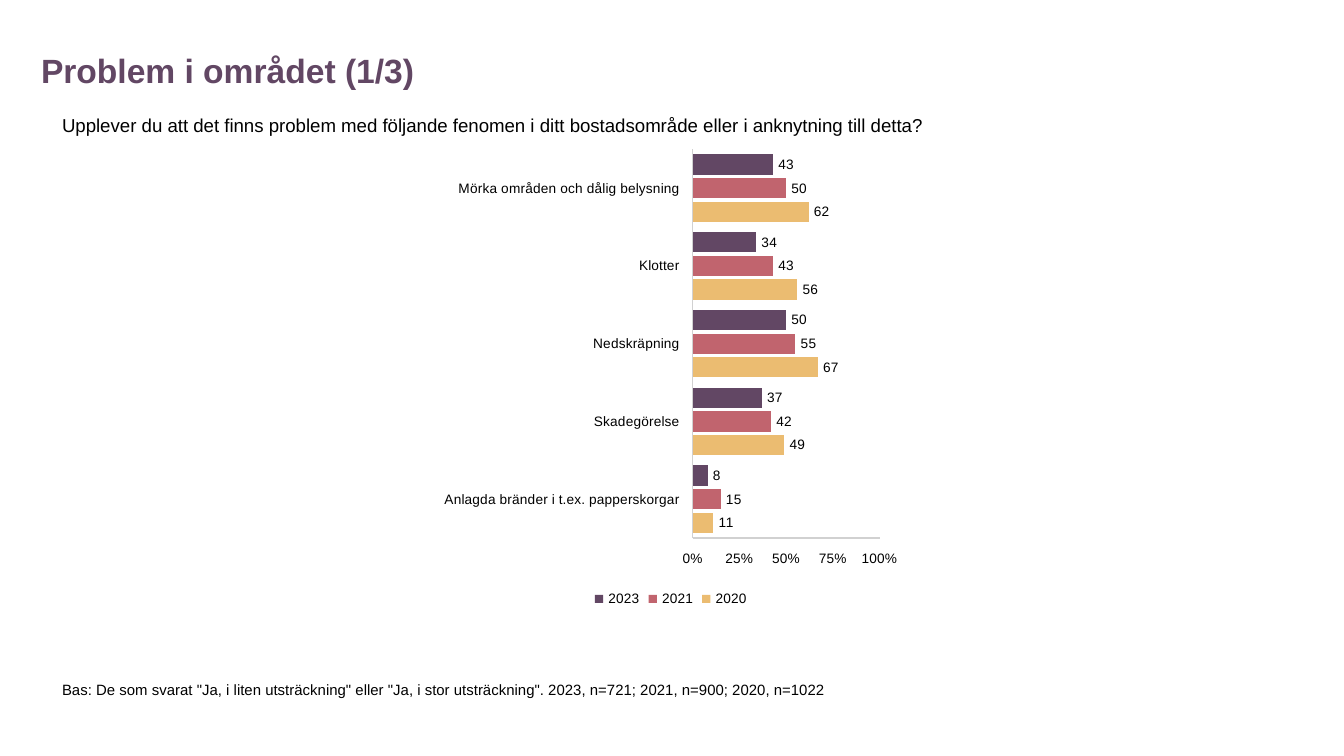
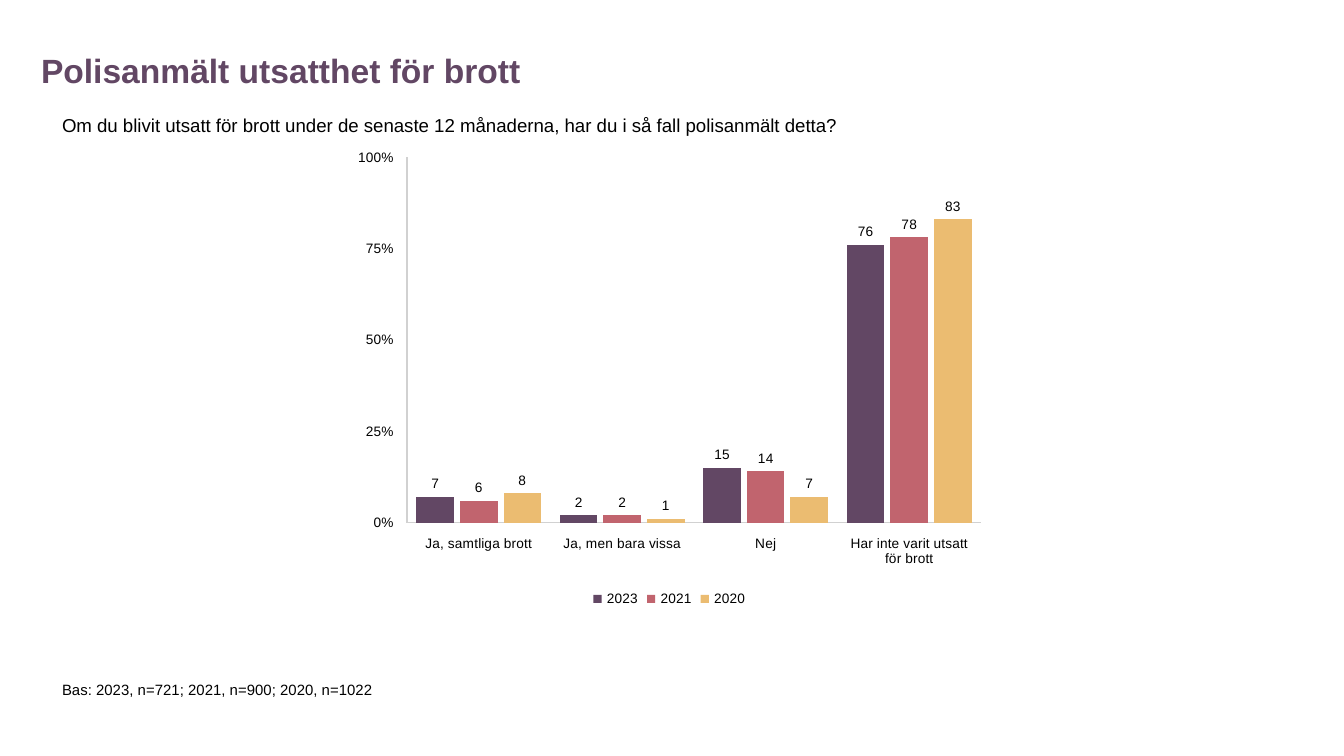
"""Build two survey slides, each with a clustered chart over three years."""
from pptx import Presentation
from pptx.chart.data import CategoryChartData
from pptx.dml.color import RGBColor
from pptx.enum.chart import (XL_CHART_TYPE, XL_LABEL_POSITION, XL_LEGEND_POSITION,
                             XL_TICK_LABEL_POSITION, XL_TICK_MARK)
from pptx.enum.text import MSO_ANCHOR
from pptx.util import Emu, Pt

PLUM = RGBColor(0x62, 0x47, 0x64)
ROSE = RGBColor(0xC1, 0x64, 0x6E)
SAND = RGBColor(0xEB, 0xBC, 0x71)
BLACK = RGBColor(0x00, 0x00, 0x00)
CHART_TEXT = RGBColor(0x21, 0x21, 0x21)
AXIS_GREY = RGBColor(0xD1, 0xD1, 0xD1)

FONT = "Arial"
LABEL_SIZE = 7.3
EMU_PER_PX = 914400 / 134.4
YEAR_COLORS = {"2023": PLUM, "2021": ROSE, "2020": SAND}

SLIDES = [
    {
        "title": "Problem i området (1/3)",
        "question": "Upplever du att det finns problem med följande fenomen "
                    "i ditt bostadsområde eller i anknytning till detta?",
        "question_width": 980,
        "base": 'Bas: De som svarat "Ja, i liten utsträckning" eller "Ja, i stor utsträckning". '
                "2023, n=721; 2021, n=900; 2020, n=1022",
        "chart_type": XL_CHART_TYPE.BAR_CLUSTERED,
        "chart_left": 435,
        "chart_width": 472,
        "categories": ["Anlagda bränder i t.ex. papperskorgar", "Skadegörelse", "Nedskräpning",
                       "Klotter", "Mörka områden och dålig belysning"],
        "series": {
            "2020": [11, 49, 67, 56, 62],
            "2021": [15, 42, 55, 43, 50],
            "2023": [8, 37, 50, 34, 43],
        },
    },
    {
        "title": "Polisanmält utsatthet för brott",
        "question": "Om du blivit utsatt för brott under de senaste 12 månaderna, "
                    "har du i så fall polisanmält detta?",
        "question_width": 933,
        "base": "Bas: 2023, n=721; 2021, n=900; 2020, n=1022",
        "chart_type": XL_CHART_TYPE.COLUMN_CLUSTERED,
        "chart_left": 345,
        "chart_width": 649,
        "categories": ["Ja, samtliga brott", "Ja, men bara vissa", "Nej",
                       "Har inte varit utsatt för brott"],
        "series": {
            "2023": [7, 2, 15, 76],
            "2021": [6, 2, 14, 78],
            "2020": [8, 1, 7, 83],
        },
    },
]


def px(length):
    return Emu(round(length * EMU_PER_PX))


def add_text(slide, text, left, top, width, height, size, color=BLACK, bold=False,
             anchor=MSO_ANCHOR.TOP, indent=0):
    shape = slide.shapes.add_textbox(px(left), px(top), px(width), px(height))
    frame = shape.text_frame
    frame.word_wrap = True
    frame.vertical_anchor = anchor
    frame.margin_left = frame.margin_top = frame.margin_right = frame.margin_bottom = 0
    paragraph = frame.paragraphs[0]
    if indent:
        properties = paragraph._p.get_or_add_pPr()
        properties.set("marL", str(px(indent)))
        properties.set("indent", "0")
    run = paragraph.add_run()
    run.text = text
    run.font.name = FONT
    run.font.size = Pt(size)
    run.font.bold = bold
    run.font.color.rgb = color


presentation = Presentation()
presentation.slide_width = px(1344)
presentation.slide_height = px(756)

for content in SLIDES:
    slide = presentation.slides.add_slide(presentation.slide_layouts[6])
    add_text(slide, content["title"], 0, 0, 1243, 140, size=18, color=PLUM, bold=True,
             anchor=MSO_ANCHOR.MIDDLE, indent=41)

    chart_data = CategoryChartData()
    chart_data.categories = content["categories"]
    for year, values in content["series"].items():
        chart_data.add_series(year, values)
    chart = slide.shapes.add_chart(
        content["chart_type"], px(content["chart_left"]), px(140),
        px(content["chart_width"]), px(472), chart_data).chart
    chart.has_title = False
    chart.font.name = FONT
    chart.font.size = Pt(10)
    chart.font.color.rgb = CHART_TEXT

    plot = chart.plots[0]
    plot.vary_by_categories = False
    plot.gap_width = 50
    plot.overlap = -16
    plot.has_data_labels = True
    plot.data_labels.show_value = True
    plot.data_labels.position = XL_LABEL_POSITION.OUTSIDE_END
    for series in plot.series:
        series.format.fill.solid()
        series.format.fill.fore_color.rgb = YEAR_COLORS[series.name]

    for axis in (chart.category_axis, chart.value_axis):
        axis.has_major_gridlines = False
        axis.major_tick_mark = axis.minor_tick_mark = XL_TICK_MARK.NONE
        axis.tick_label_position = XL_TICK_LABEL_POSITION.LOW
        axis.format.line.color.rgb = AXIS_GREY
        axis.format.line.width = Pt(0.75)
    chart.value_axis.minimum_scale = 0
    chart.value_axis.maximum_scale = 100
    chart.value_axis.major_unit = 25
    chart.value_axis.tick_labels.number_format = "General\\%"
    chart.value_axis.tick_labels.number_format_is_linked = False

    chart.has_legend = True
    chart.legend.position = XL_LEGEND_POSITION.BOTTOM
    chart.legend.include_in_layout = False
    for part in (plot.data_labels, chart.category_axis.tick_labels,
                 chart.value_axis.tick_labels, chart.legend):
        part.font.name = FONT
        part.font.size = Pt(LABEL_SIZE)
        part.font.color.rgb = BLACK

    add_text(slide, content["question"], 62, 114, content["question_width"], 26, size=10)
    add_text(slide, content["base"], 62, 681, 980, 26, size=8)

presentation.save("out.pptx")
